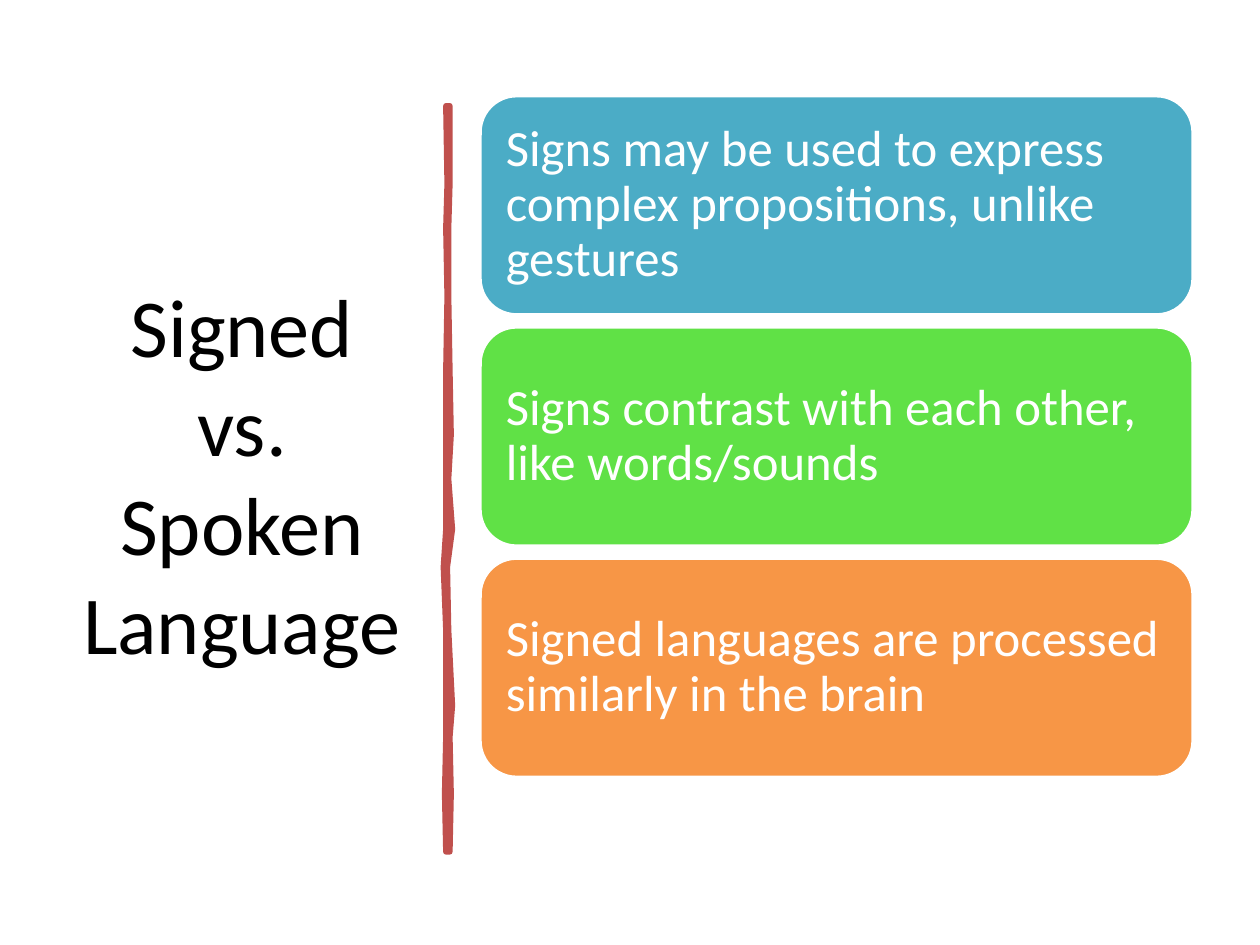
from pptx import Presentation
from pptx.dml.color import RGBColor
from pptx.enum.shapes import MSO_SHAPE
from pptx.enum.text import MSO_ANCHOR, PP_ALIGN
from pptx.util import Inches, Pt

CARDS = [
    ("Signs may be used to express complex propositions, unlike gestures", "4BACC6"),
    ("Signs contrast with each other, like words/sounds", "60E146"),
    ("Signed languages are processed similarly in the brain", "F79646"),
]
TOP, STEP = 0.76, 1.835

# Brush stroke edges: height, left, right
STROKE = [
    (0.84, 3.54, 3.57), (1.46, 3.55, 3.57), (1.81, 3.54, 3.56),
    (2.35, 3.55, 3.56), (2.94, 3.54, 3.57), (3.45, 3.54, 3.58),
    (3.8, 3.54, 3.56), (4.2, 3.54, 3.59), (4.5, 3.52, 3.55),
    (5.0, 3.54, 3.56), (5.6, 3.54, 3.59), (5.85, 3.54, 3.57),
    (6.3, 3.53, 3.58), (6.76, 3.54, 3.57),
]


def color(code):
    return RGBColor.from_string(code)


def paint(shape, fill, line, width):
    shape.shadow.inherit = False
    shape.fill.solid()
    shape.fill.fore_color.rgb = color(fill)
    shape.line.color.rgb = color(line)
    shape.line.width = Pt(width)


def write(shape, text, size, code, align, inset):
    frame = shape.text_frame
    frame.text = text
    sides = {"margin_" + side: Inches(gap) for side, gap in inset.items()}
    layout = {"word_wrap": True, "vertical_anchor": MSO_ANCHOR.MIDDLE, **sides}
    for name, value in layout.items():
        setattr(frame, name, value)
    para = frame.paragraphs[0]
    para.alignment = align
    for run in para.runs:
        for name, value in {"name": "Calibri", "size": Pt(size)}.items():
            setattr(run.font, name, value)
        run.font.color.rgb = color(code)
    return para


def add_title(slide):
    title = slide.shapes.title
    place = {"left": 0.52, "top": 0.7, "width": 2.8, "height": 6.11}
    for name, value in place.items():
        setattr(title, name, Inches(value))
    inset = {"left": 0.1, "right": 0.1, "top": 0.05, "bottom": 0.05}
    write(title, "Signed\vvs. Spoken Language", 47, "000000",
          PP_ALIGN.CENTER, inset)


def add_stroke(slide):
    # Down the right edge, then back up the left
    right = [(r, y) for y, _, r in STROKE]
    left = [(l, y) for y, l, _ in reversed(STROKE)]
    points = [(Inches(x), Inches(y)) for x, y in right + left]
    outline = slide.shapes.build_freeform(*points[0])
    outline.add_line_segments(points[1:], close=True)
    paint(outline.convert_to_shape(), "C0504D", "C0504D", 3.25)


def add_card(slide, top, text, fill):
    card = slide.shapes.add_shape(
        MSO_SHAPE.ROUNDED_RECTANGLE,
        Inches(3.81), Inches(top), Inches(5.66), Inches(1.74))
    paint(card, fill, "FFFFFF", 2)
    inset = dict.fromkeys(("left", "right", "top", "bottom"), 0.12)
    para = write(card, text, 29, "FFFFFF", PP_ALIGN.LEFT, inset)
    para.line_spacing = 0.9


def main():
    deck = Presentation()
    deck.slide_width, deck.slide_height = Inches(10), Inches(7.5)
    slide = deck.slides.add_slide(deck.slide_layouts[5])
    add_title(slide)
    add_stroke(slide)
    for i, (text, fill) in enumerate(CARDS):
        add_card(slide, TOP + i * STEP, text, fill)
    deck.save("out.pptx")


if __name__ == "__main__":
    main()
